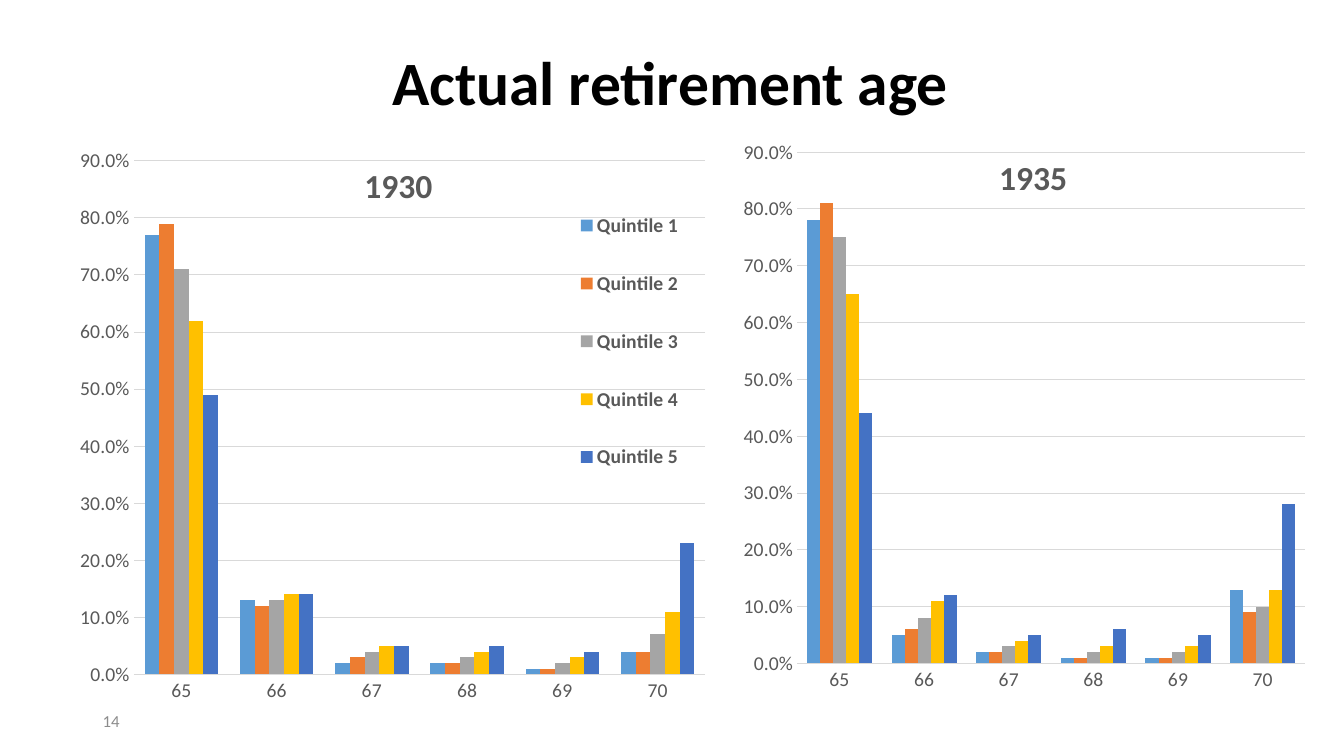
from dataclasses import dataclass
from lxml.etree import SubElement
from pptx import Presentation
from pptx.chart.data import CategoryChartData
from pptx.dml.color import RGBColor
from pptx.enum.chart import XL_CHART_TYPE, XL_LEGEND_POSITION, XL_TICK_MARK
from pptx.enum.text import MSO_ANCHOR, PP_ALIGN
from pptx.oxml import parse_xml
from pptx.oxml.ns import nsdecls, qn
from pptx.util import Inches, Pt


@dataclass(frozen=True)
class Theme:
    font: str = "Calibri"
    title: str = "000000"
    label: str = "595959"
    grid: str = "D9D9D9"
    number: str = "8C8C8C"
    bars: tuple = ("5B9BD5", "ED7D31", "A5A5A5", "FFC000", "4472C4")
    title_size: int = 44
    chart_title_size: int = 24
    label_size: int = 14
    number_size: int = 12


theme = Theme()


def style(font, size, color, bold=False):
    font.name = theme.font
    font.size = Pt(size)
    font.bold = bold
    font.color.rgb = RGBColor.from_string(color)


def place(element, index, box, inner=False):
    for old in element.findall(qn("c:layout")):
        element.remove(old)
    layout = parse_xml(f"<c:layout {nsdecls('c')}/>")
    manual = SubElement(layout, qn("c:manualLayout"))
    settings = [("layoutTarget", "inner")] if inner else []
    settings += [("xMode", "edge"), ("yMode", "edge")]
    settings += zip("xywh", box)
    for name, value in settings:
        SubElement(manual, qn(f"c:{name}")).set("val", str(value))
    element.insert(index, layout)


ages = ["65", "66", "67", "68", "69", "70"]
cohorts = [
    {
        "year": "1930", "name": "Quintile", "legend": True,
        "at": (0.35, 1.27, 6.65, 5.83),
        "plot": (0.147, 0.056, 0.853, 0.874),
        "title": (0.482, 0.049),
        "shares": [
            (0.77, 0.13, 0.02, 0.02, 0.01, 0.04),
            (0.79, 0.12, 0.03, 0.02, 0.01, 0.04),
            (0.71, 0.13, 0.04, 0.03, 0.02, 0.07),
            (0.62, 0.14, 0.05, 0.04, 0.03, 0.11),
            (0.49, 0.14, 0.05, 0.05, 0.04, 0.23),
        ],
    },
    {
        "year": "1935", "name": "Series", "legend": False,
        "at": (7, 1.39, 6.01, 5.7),
        "plot": (0.151, 0.021, 0.838, 0.89),
        "title": (0.474, 0.016),
        "shares": [
            (0.78, 0.05, 0.02, 0.01, 0.01, 0.13),
            (0.81, 0.06, 0.02, 0.01, 0.01, 0.09),
            (0.75, 0.08, 0.03, 0.02, 0.02, 0.1),
            (0.65, 0.11, 0.04, 0.03, 0.03, 0.13),
            (0.44, 0.12, 0.05, 0.06, 0.05, 0.28),
        ],
    },
]

prs = Presentation()
prs.slide_width = Inches(13.33)
prs.slide_height = Inches(7.5)
s = prs.slides.add_slide(prs.slide_layouts[5])

title = s.shapes.title
title.left, title.top = Inches(0.9), Inches(0.12)
title.width, title.height = Inches(11.5), Inches(1.45)
tf = title.text_frame
tf.vertical_anchor = MSO_ANCHOR.MIDDLE
p = tf.paragraphs[0]
p.alignment = PP_ALIGN.CENTER
p.line_spacing = 0.9
r = p.add_run()
r.text = "Actual retirement age"
style(r.font, theme.title_size, theme.title, True)

for cohort in cohorts:
    data = CategoryChartData(number_format="0.0%")
    data.categories = ages
    for number, shares in enumerate(cohort["shares"], 1):
        data.add_series(f"{cohort['name']} {number}", shares)
    box = [Inches(v) for v in cohort["at"]]
    chart = s.shapes.add_chart(XL_CHART_TYPE.COLUMN_CLUSTERED, *box, data).chart
    style(chart.font, theme.label_size, theme.title)

    chart.has_title = True
    p = chart.chart_title.text_frame.paragraphs[0]
    r = p.add_run()
    r.text = cohort["year"]
    style(r.font, theme.chart_title_size, theme.label, True)
    chart.chart_title.include_in_layout = True
    place(chart.chart_title._element, 1, cohort["title"])

    plot = chart.plots[0]
    plot.gap_width = 150
    plot.overlap = 0
    plot.vary_by_categories = False
    place(plot._element.getparent(), 0, cohort["plot"], True)
    for series, color in zip(plot.series, theme.bars):
        series.format.fill.solid()
        series.format.fill.fore_color.rgb = RGBColor.from_string(color)

    for axis in (chart.category_axis, chart.value_axis):
        axis.major_tick_mark = XL_TICK_MARK.NONE
        axis.minor_tick_mark = XL_TICK_MARK.NONE
        style(axis.tick_labels.font, theme.label_size, theme.label)
    values = chart.value_axis
    values.minimum_scale, values.maximum_scale, values.major_unit = 0, 0.9, 0.1
    values.tick_labels.number_format = "0.0%"
    values.tick_labels.number_format_is_linked = False
    values.format.line.fill.background()
    for line in (chart.category_axis.format.line, values.major_gridlines.format.line):
        line.color.rgb = RGBColor.from_string(theme.grid)
        line.width = Pt(0.75)

    chart.has_legend = cohort["legend"]
    if chart.has_legend:
        chart.legend.position = XL_LEGEND_POSITION.TOP
        chart.legend.include_in_layout = False
        style(chart.legend.font, theme.label_size, theme.label, True)
        place(chart.legend._element, 1, (0.807, 0.088, 0.16, 0.55))

sp = s.shapes.add_textbox(Inches(0.92), Inches(6.95), Inches(3), Inches(0.4))
tf = sp.text_frame
tf.word_wrap = True
tf.vertical_anchor = MSO_ANCHOR.MIDDLE
p = tf.paragraphs[0]
p.alignment = PP_ALIGN.LEFT
r = p.add_run()
r.text = "14"
style(r.font, theme.number_size, theme.number)

prs.save("out.pptx")
